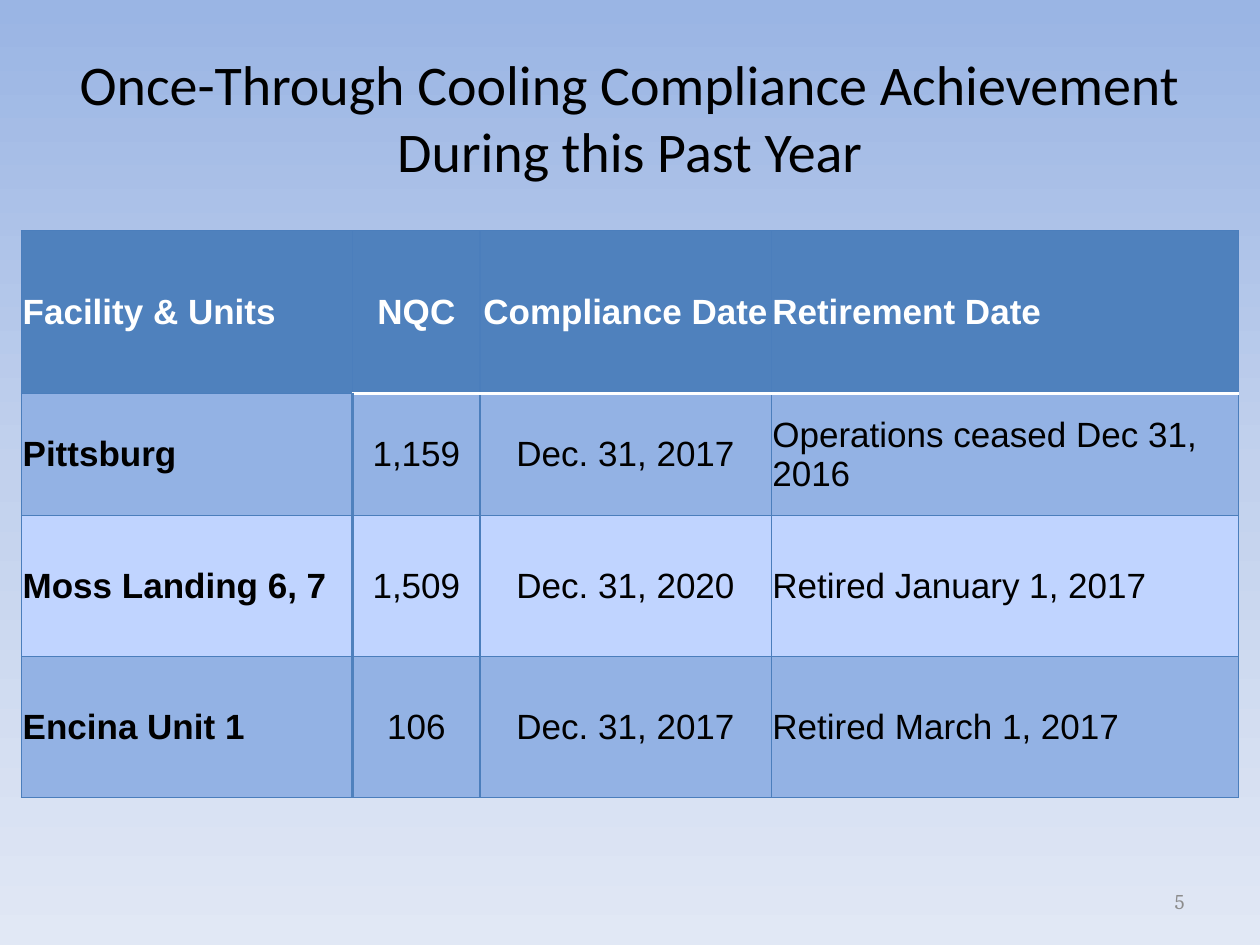
import pptx
import pptx.dml.color
import pptx.enum.text
import pptx.oxml
import pptx.oxml.ns
import pptx.util

Inches = pptx.util.Inches
Pt = pptx.util.Pt
RGBColor = pptx.dml.color.RGBColor
Align = pptx.enum.text.PP_ALIGN
MIDDLE = pptx.enum.text.MSO_ANCHOR.MIDDLE

BLACK = RGBColor(0, 0, 0)
WHITE = RGBColor(255, 255, 255)
GRAY = RGBColor(0x8C, 0x8C, 0x8C)
HEADER_BLUE = RGBColor(0x4F, 0x81, 0xBD)
LINE_BLUE = RGBColor(0x4B, 0x7E, 0xBC)
BAND_DARK = RGBColor(0x93, 0xB2, 0xE4)
BAND_LIGHT = RGBColor(0xC0, 0xD4, 0xFF)
SKY = (
    (0, RGBColor(0x9A, 0xB5, 0xE4)),
    (50, RGBColor(0xC2, 0xD1, 0xED)),
    (100, RGBColor(0xE1, 0xE8, 0xF5)),
)

COLUMN_WIDTHS = (2.63, 1.01, 2.31, 3.71)
ROW_HEIGHTS = (1.29, 0.97, 1.12, 1.12)
COLUMN_ALIGNS = (Align.LEFT, Align.CENTER, Align.CENTER, Align.LEFT)
COMPLIANCE_ROWS = (
    ("Facility & Units", "NQC", "Compliance Date", "Retirement Date"),
    ("Pittsburg", "1,159", "Dec. 31, 2017", "Operations ceased Dec 31, 2016"),
    ("Moss Landing 6, 7", "1,509", "Dec. 31, 2020", "Retired January 1, 2017"),
    ("Encina Unit 1", "106", "Dec. 31, 2017", "Retired March 1, 2017"),
)


class SlideBuilder:
    """Holds the text styles and the current slide, and adds each kind of element."""

    title_style = {"name": "Calibri", "size": Pt(32), "color": BLACK}
    header_style = {"name": "Arial", "size": Pt(20), "bold": True, "color": WHITE}
    label_style = {**header_style, "color": BLACK}
    body_style = {**label_style, "bold": False}
    number_style = {"name": "Cambria", "size": Pt(12), "color": GRAY}

    def __init__(self, deck):
        self.slide = deck.slides.add_slide(deck.slide_layouts[5])

    def format_text(self, frame, style, align):
        for para in frame.paragraphs:
            para.alignment = align
            for span in para.runs:
                for name, value in style.items():
                    if name == "color":
                        span.font.color.rgb = value
                    else:
                        setattr(span.font, name, value)

    def background(self, stops):
        fill = self.slide.background.fill
        fill.gradient()
        fill.gradient_angle = 270
        stop_list = next(self.slide.element.iter(pptx.oxml.ns.qn("a:gsLst")))
        for stop in list(stop_list):
            stop_list.remove(stop)
        for position, color in stops:
            stop_list.append(pptx.oxml.parse_xml(
                f'<a:gs {pptx.oxml.ns.nsdecls("a")} pos="{position * 1000}">'
                f'<a:srgbClr val="{color}"/></a:gs>'))

    def title(self, text, left, top, width, height):
        title = self.slide.shapes.title
        title.left, title.top = Inches(left), Inches(top)
        title.width, title.height = Inches(width), Inches(height)
        title.text_frame.text = text
        title.text_frame.vertical_anchor = MIDDLE
        self.format_text(title.text_frame, self.title_style, Align.CENTER)

    def text(self, text, left, top, width, height, style, align):
        box = self.slide.shapes.add_textbox(
            Inches(left), Inches(top), Inches(width), Inches(height))
        frame = box.text_frame
        frame.word_wrap = True
        frame.vertical_anchor = MIDDLE
        frame.text = text
        self.format_text(frame, style, align)

    def borders(self, cell, edges):
        properties = cell._tc.get_or_add_tcPr()
        for side in "LRTB":
            color, width = edges.get(side, (LINE_BLUE, 0.75))
            properties.append(pptx.oxml.parse_xml(
                f'<a:ln{side} {pptx.oxml.ns.nsdecls("a")} w="{int(Pt(width))}">'
                f'<a:solidFill><a:srgbClr val="{color}"/></a:solidFill></a:ln{side}>'))

    def cell(self, cell, text, style, align, fill, edges):
        margins = {"margin_left": 0.01, "margin_right": 0.01,
                   "margin_top": 0.01, "margin_bottom": 0}
        for name, value in margins.items():
            setattr(cell, name, Inches(value))
        cell.vertical_anchor = MIDDLE
        cell.text = text
        self.format_text(cell.text_frame, style, align)
        self.borders(cell, edges)
        cell.fill.solid()
        cell.fill.fore_color.rgb = fill

    def table(self, rows, left, top):
        table = self.slide.shapes.add_table(
            len(rows), len(COLUMN_WIDTHS), Inches(left), Inches(top),
            Inches(sum(COLUMN_WIDTHS)), Inches(sum(ROW_HEIGHTS))).table
        for column, width in zip(table.columns, COLUMN_WIDTHS):
            column.width = Inches(width)
        for row, height in zip(table.rows, ROW_HEIGHTS):
            row.height = Inches(height)
        for r, texts in enumerate(rows):
            for c, text in enumerate(texts):
                edges = {}
                if r == 0:
                    style, fill = self.header_style, HEADER_BLUE
                else:
                    style = self.body_style if c else self.label_style
                    fill = BAND_DARK if r % 2 else BAND_LIGHT
                    if c < 2:
                        edges["L" if c else "R"] = (HEADER_BLUE, 2)
                if c and r < 2:
                    edges["T" if r else "B"] = (WHITE, 2)
                self.cell(table.cell(r, c), text, style, COLUMN_ALIGNS[c], fill, edges)


def main():
    deck = pptx.Presentation()
    deck.slide_width, deck.slide_height = Inches(10), Inches(7.5)
    page = SlideBuilder(deck)
    page.background(SKY)
    page.title("Once-Through Cooling Compliance Achievement\vDuring this Past Year",
               0.5, 0.3, 9, 1.25)
    page.table(COMPLIANCE_ROWS, 0.17, 1.83)
    page.text("5", 7.17, 6.95, 2.33, 0.4, page.number_style, Align.RIGHT)
    deck.save("out.pptx")


if __name__ == "__main__":
    main()
